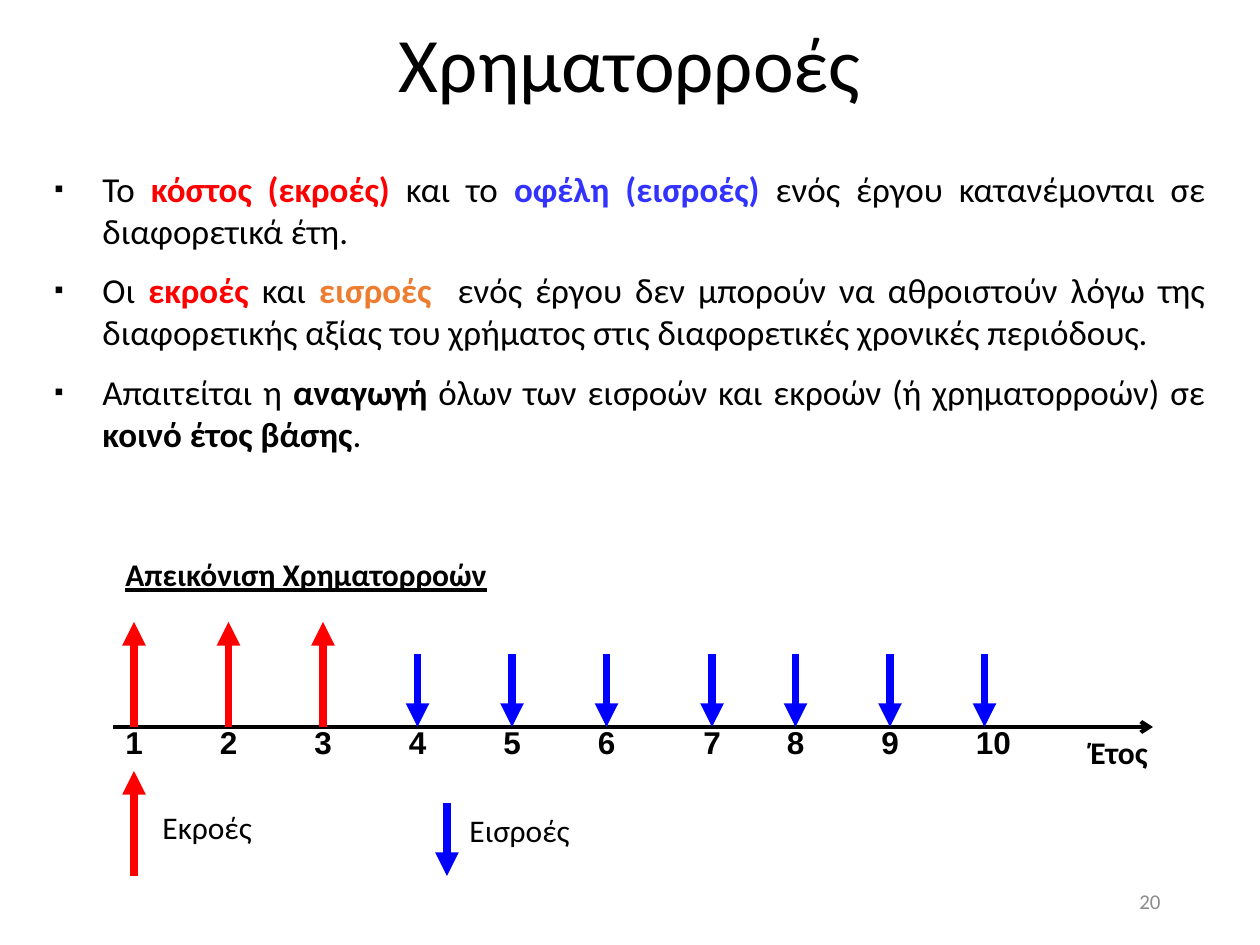
from lxml.etree import SubElement
from pptx import Presentation
from pptx.dml.color import RGBColor
from pptx.enum.shapes import MSO_CONNECTOR
from pptx.enum.text import MSO_ANCHOR, PP_ALIGN
from pptx.oxml.ns import qn
from pptx.util import Emu, Pt

PX = 914400 / 126
BLACK, GRAY, RED, BLUE = "000000", "8C8C8C", "FF0000", "0000FF"
VIOLET, ORANGE = "3333FF", "ED7D31"


def px(length):
    return Emu(round(length * PX))


def color(value):
    return RGBColor.from_string(value)


class SlideBuilder:
    """Holds the text style and the slide being built."""

    font = "Calibri"
    size = 18

    def __init__(self, slide):
        self.slide = slide

    def format_run(self, run, size=None, ink=BLACK, bold=False, font=None, underline=False):
        run.font.name = font or self.font
        run.font.size = Pt(size or self.size)
        run.font.bold = bold
        run.font.underline = underline
        run.font.color.rgb = color(ink)

    def frame(self, left, top, width, height, anchor=MSO_ANCHOR.TOP):
        shape = self.slide.shapes.add_textbox(px(left), px(top), px(width), px(height))
        shape.text_frame.word_wrap = True
        shape.text_frame.vertical_anchor = anchor
        return shape.text_frame

    def text(self, text, box, align=PP_ALIGN.LEFT, anchor=MSO_ANCHOR.TOP, spacing=None, **style):
        text_frame = self.frame(*box, anchor)
        text_frame.text = text
        paragraph = text_frame.paragraphs[0]
        paragraph.alignment = align
        paragraph.line_spacing = spacing
        self.format_run(paragraph.runs[0], **style)

    def bullets(self, items, box, size, indent):
        text_frame = self.frame(*box)
        for index, parts in enumerate(items):
            paragraph = text_frame.add_paragraph() if index else text_frame.paragraphs[0]
            paragraph.alignment = PP_ALIGN.JUSTIFY
            if index:
                paragraph.space_before = Pt(size / 2)
            properties = paragraph._p.get_or_add_pPr()
            properties.set("marL", str(px(indent)))
            properties.set("indent", str(-px(indent)))
            SubElement(properties, qn("a:buSzPct"), val="75000")
            SubElement(properties, qn("a:buFont"), typeface="Arial")
            SubElement(properties, qn("a:buChar"), char="▪")
            for text, ink, bold in parts:
                run = paragraph.add_run()
                run.text = text
                self.format_run(run, size, ink, bold)

    def arrow(self, start, end, ink, width=4.5, head="triangle"):
        points = [px(value) for value in (*start, *end)]
        connector = self.slide.shapes.add_connector(MSO_CONNECTOR.STRAIGHT, *points)
        connector.line.color.rgb = color(ink)
        connector.line.width = Pt(width)
        SubElement(connector.line._get_or_add_ln(), qn("a:tailEnd"), type=head)
        SubElement(connector._element.spPr, qn("a:effectLst"))

    def outflow(self, x, bottom):
        self.arrow((x, bottom), (x, bottom - 105), RED)

    def inflow(self, x, bottom):
        self.arrow((x, bottom - 73), (x, bottom), BLUE)


def main():
    presentation = Presentation()
    presentation.slide_width, presentation.slide_height = px(1260), px(945)
    slide = presentation.slides.add_slide(presentation.slide_layouts[6])
    builder = SlideBuilder(slide)

    # Title and slide number
    builder.text("Χρηματορροές", (0, 0, 1260, 135), PP_ALIGN.CENTER,
                 MSO_ANCHOR.MIDDLE, spacing=0.9, size=44)
    builder.text("20", (890, 876, 283, 50), PP_ALIGN.RIGHT,
                 MSO_ANCHOR.MIDDLE, size=12, ink=GRAY)

    # Main points
    builder.bullets([
        [("Το ", BLACK, False), ("κόστος (εκροές) ", RED, True),
         ("και το ", BLACK, False), ("οφέλη (εισροές)", VIOLET, True),
         (" ενός έργου κατανέμονται σε διαφορετικά έτη.", BLACK, False)],
        [("Οι ", BLACK, False), ("εκροές", RED, True),
         (" και ", BLACK, False), ("εισροές", ORANGE, True),
         ("  ενός έργου δεν μπορούν να αθροιστούν λόγω της διαφορετικής αξίας "
          "του χρήματος στις διαφορετικές χρονικές περιόδους.", BLACK, False)],
        [("Απαιτείται η ", BLACK, False), ("αναγωγή", BLACK, True),
         (" όλων των εισροών και εκροών (ή χρηματορροών) σε ", BLACK, False),
         ("κοινό έτος βάσης", BLACK, True), (".", BLACK, False)],
    ], (42, 161, 1176, 310), size=20, indent=48)

    # Time axis
    axis = 727
    builder.text("Απεικόνιση Χρηματορροών", (113, 549, 400, 50), bold=True, underline=True)
    builder.arrow((113, axis), (1153, axis), BLACK, 2.25, "arrow")
    builder.text("Έτος", (1078, axis, 96, 50), bold=True)

    # Yearly flows: three years of outflows, then inflows
    for year in range(1, 11):
        x = 134 + 94.5 * (year - 1)
        if year == 7:
            x += 11
        if year <= 3:
            builder.outflow(x, axis)
        else:
            builder.inflow(x, axis)
        builder.text(str(year), (x - 21, 717, 53 if year < 10 else 64, 50),
                     bold=True, font="Arial")

    # Legend
    builder.outflow(134, 876)
    builder.text("Εκροές", (150, 802, 122, 50))
    builder.inflow(447, 876)
    builder.text("Εισροές", (457, 805, 134, 50))

    presentation.save("out.pptx")


if __name__ == "__main__":
    main()
